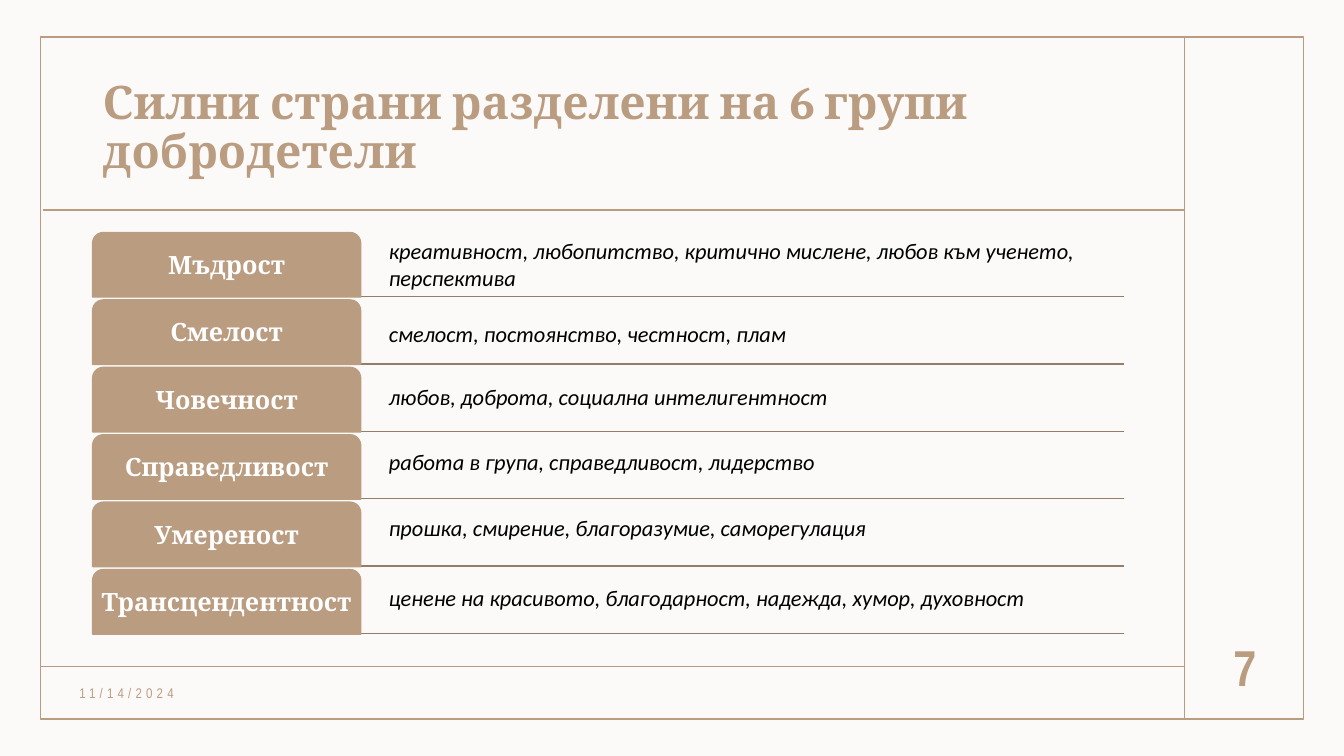
from pptx import Presentation
from pptx.dml.color import RGBColor
from pptx.enum.shapes import MSO_CONNECTOR, MSO_SHAPE
from pptx.enum.text import MSO_ANCHOR, MSO_AUTO_SIZE, PP_ALIGN
from pptx.oxml.ns import qn
from pptx.util import Pt

TAN, BROWN, WHITE, BLACK = "BA9C80", "957D67", "FFFFFF", "000000"
PAPER = "FCFAF9"

# Virtue, its strengths, top of the strengths text
ROWS = [
    ("Мъдрост", "креативност, любопитство, критично мислене, "
     "любов към ученето, перспектива", 165.6),
    ("Смелост", "смелост, постоянство, честност, плам", 225.4),
    ("Човечност", "любов, доброта, социална интелигентност", 270),
    ("Справедливост", "работа в група, справедливост, лидерство", 316.8),
    ("Умереност", "прошка, смирение, благоразумие, саморегулация", 363.6),
    ("Трансцендентност", "ценене на красивото, благодарност, надежда, "
     "хумор, духовност", 414),
]
LEFT, TOP, STEP = 66.2, 166.1, 48.15
TAB_W, TAB_H = 191.5, 46.1


def paint(target, color):
    """Give a fill a solid colour."""
    target.solid()
    target.fore_color.rgb = RGBColor.from_string(color)


def write(shape, text, font, size, color, bold=False, italic=False,
          align=PP_ALIGN.LEFT, anchor=MSO_ANCHOR.MIDDLE, space=1.0):
    frame = shape.text_frame
    frame.text = text
    frame.auto_size = MSO_AUTO_SIZE.NONE
    frame.word_wrap = True
    frame.vertical_anchor = anchor
    para = frame.paragraphs[0]
    para.alignment = align
    para.line_spacing = space
    run = para.runs[0]
    run.font.name = font
    run.font.size = Pt(size)
    run.font.bold = bold
    run.font.italic = italic
    paint(run.font.fill, color)
    return run


def add_text(slide, x, y, w, h, text, *style, **more):
    box = slide.shapes.add_textbox(Pt(x), Pt(y), Pt(w), Pt(h))
    return write(box, text, *style, **more)


def add_line(slide, x1, y1, x2, y2, color=TAN):
    line = slide.shapes.add_connector(
        MSO_CONNECTOR.STRAIGHT, Pt(x1), Pt(y1), Pt(x2), Pt(y2))
    paint(line.line.fill, color)
    line.line.width = Pt(1)
    props = line._element.spPr
    props.append(props.makeelement(qn("a:effectLst"), {}))


def add_box(slide, kind, x, y, w, h):
    box = slide.shapes.add_shape(kind, Pt(x), Pt(y), Pt(w), Pt(h))
    box.shadow.inherit = False
    paint(box.line.fill, TAN)
    box.line.width = Pt(1)
    return box


def add_tab(slide, y, label):
    tab = add_box(slide, MSO_SHAPE.ROUND_2_SAME_RECTANGLE,
                  LEFT, y, TAB_W, TAB_H)
    paint(tab.fill, TAN)
    write(tab, label, "Cambria", 18, WHITE, bold=True,
          align=PP_ALIGN.CENTER, space=0.9)
    frame = tab.text_frame
    frame.word_wrap = False
    frame.margin_left = frame.margin_right = Pt(2.9)
    frame.margin_top = frame.margin_bottom = Pt(2.9)


def main():
    deck = Presentation()
    deck.slide_width, deck.slide_height = Pt(960), Pt(540)
    slide = deck.slides.add_slide(deck.slide_layouts[5])
    paint(slide.background.fill, PAPER)

    # Frame and its dividers
    add_box(slide, MSO_SHAPE.RECTANGLE, 28.8, 26.6, 902.2,
            487.1).fill.background()
    add_line(slide, 846.2, 26.6, 846.2, 513.5)
    add_line(slide, 29.3, 475.9, 846.2, 475.9)
    add_line(slide, 30.5, 149.9, 846.2, 149.9)

    # Title
    title = slide.shapes.title
    title.left, title.top = Pt(66.2), Pt(43.2)
    title.width, title.height = Pt(750.2), Pt(97.9)
    write(title, "Силни страни разделени на 6 групи добродетели",
          "Cambria", 33, TAN, bold=True, space=0.9)

    # Virtues with their strengths
    for i, (label, text, top) in enumerate(ROWS):
        y = TOP + i * STEP
        add_line(slide, LEFT, y + TAB_H - 0.4, 802.8, y + TAB_H - 0.4, BROWN)
        add_tab(slide, y, label)
        add_text(slide, 270.7, top, 540, 46 if i == 0 else 26.6, text,
                 "Calibri", 16, BLACK, italic=True, anchor=MSO_ANCHOR.TOP)

    # Date and slide number
    date = add_text(slide, 49.7, 483.8, 248.4, 22.3, "11/14/2024",
                    "Arial Narrow", 10, TAN)
    date.font._element.set("spc", "300")
    add_text(slide, 851.8, 446.4, 74.9, 59.8, "7", "Arial Narrow", 36, TAN,
             bold=True, align=PP_ALIGN.CENTER)

    deck.save("out.pptx")


if __name__ == "__main__":
    main()
